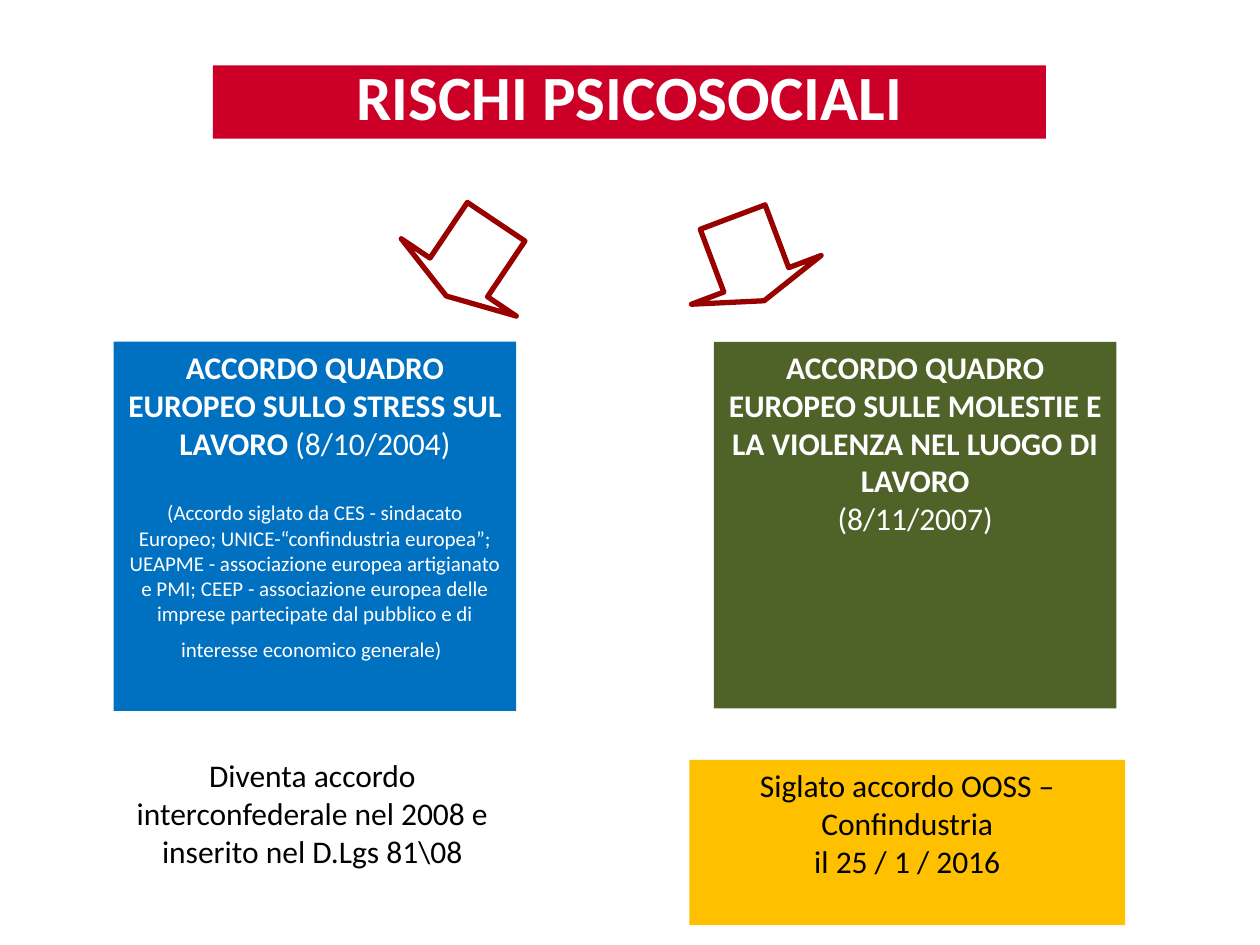
import pptx
import pptx.util
import pptx.dml.color
import pptx.enum.shapes
import pptx.enum.text

Pt = pptx.util.Pt
RGBColor = pptx.dml.color.RGBColor
MSO_SHAPE = pptx.enum.shapes.MSO_SHAPE
PP_ALIGN = pptx.enum.text.PP_ALIGN
MSO_ANCHOR = pptx.enum.text.MSO_ANCHOR
MSO_AUTO_SIZE = pptx.enum.text.MSO_AUTO_SIZE

WHITE = RGBColor(0xFF, 0xFF, 0xFF)
BLACK = RGBColor(0x00, 0x00, 0x00)
RED = RGBColor(0xCC, 0x00, 0x27)
DARK_RED = RGBColor(0x99, 0x00, 0x00)
BLUE = RGBColor(0x00, 0x70, 0xC0)
GREEN = RGBColor(0x4F, 0x62, 0x28)
AMBER = RGBColor(0xFF, 0xC0, 0x00)


def add_span(para, text, size=18, color=WHITE, bold=False):
    para.alignment = PP_ALIGN.CENTER
    span = para.add_run()
    span.text = text
    span.font.name = "Calibri"
    span.font.size = Pt(size)
    span.font.bold = bold
    span.font.color.rgb = color


deck = pptx.Presentation()
deck.slide_width = Pt(720)
deck.slide_height = Pt(540)
page = deck.slides.add_slide(deck.slide_layouts[5])

title = page.shapes.title
title.left, title.top, title.width, title.height = Pt(121.7), Pt(37.4), Pt(476), Pt(41.8)
title.fill.solid()
title.fill.fore_color.rgb = RED
title.text_frame.auto_size = MSO_AUTO_SIZE.NONE
title.text_frame.vertical_anchor = MSO_ANCHOR.TOP
title_para = title.text_frame.paragraphs[0]
title_para.line_spacing = 0.8
add_span(title_para, "RISCHI PSICOSOCIALI", size=36, bold=True)

for left, rotation in [(229.7, 33.9), (388.1, 339.4)]:
    arrow = page.shapes.add_shape(MSO_SHAPE.DOWN_ARROW, Pt(left), Pt(122.4), Pt(79.2), Pt(51.1))
    arrow.rotation = rotation
    arrow.adjustments[0] = 0.5
    arrow.adjustments[1] = 0.25
    arrow.shadow.inherit = False
    arrow.fill.solid()
    arrow.fill.fore_color.rgb = WHITE
    arrow.line.color.rgb = DARK_RED
    arrow.line.width = Pt(3)

heading = {"bold": True}
note = {"color": BLACK}
boxes = [
    (65, 195.3, 230, 211, BLUE, [
        [("ACCORDO QUADRO EUROPEO SULLO STRESS SUL LAVORO ", heading), ("(8/10/2004)", {})],
        [("(Accordo siglato da CES - sindacato Europeo; UNICE-“confindustria europea”; "
          "UEAPME - associazione europea artigianato e PMI; CEEP - associazione europea delle "
          "imprese partecipate dal pubblico e di interesse economico generale)", {"size": 12}),
         (" ", {})],
    ]),
    (408, 195.3, 230, 209.5, GREEN, [
        [("ACCORDO QUADRO EUROPEO SULLE MOLESTIE E LA VIOLENZA NEL LUOGO DI LAVORO", heading)],
        [("(8/11/2007)", {})],
    ]),
    (54, 428.6, 249, 72.7, None, [
        [("Diventa accordo interconfederale nel 2008 e inserito nel D.Lgs 81\\08", note)],
    ]),
    (394, 434.2, 249, 94.5, AMBER, [
        [("Siglato accordo OOSS – Confindustria", note)],
        [("il 25 / 1 / 2016", note)],
    ]),
]

for left, top, width, height, fill, paragraphs in boxes:
    place = Pt(left), Pt(top), Pt(width), Pt(height)
    if fill is None:
        box = page.shapes.add_textbox(*place)
    else:
        box = page.shapes.add_shape(MSO_SHAPE.RECTANGLE, *place)
        box.shadow.inherit = False
        box.fill.solid()
        box.fill.fore_color.rgb = fill
        box.line.fill.background()
    frame = box.text_frame
    frame.word_wrap = True
    frame.vertical_anchor = MSO_ANCHOR.TOP
    for index, spans in enumerate(paragraphs):
        para = frame.add_paragraph() if index else frame.paragraphs[0]
        if index and fill == BLUE:
            para.space_before = Pt(22)
        for text, style in spans:
            add_span(para, text, **style)

deck.save("out.pptx")
